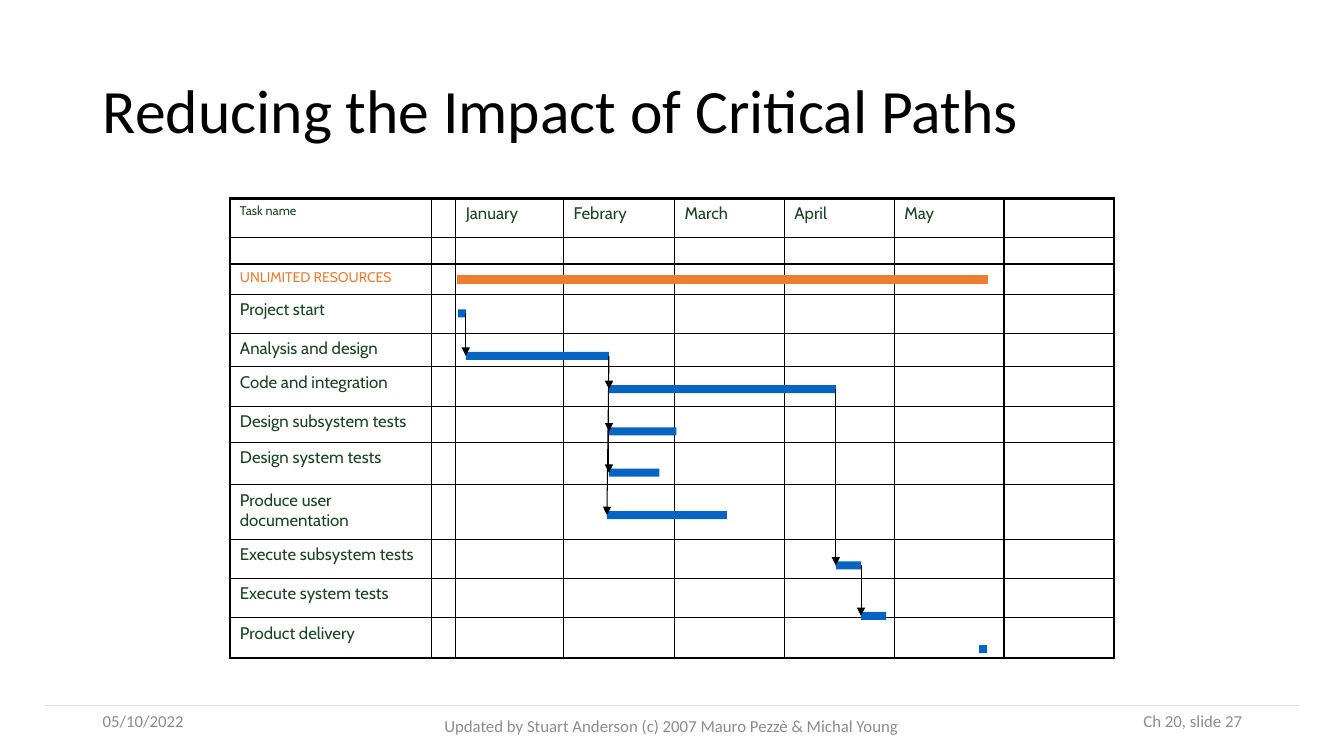
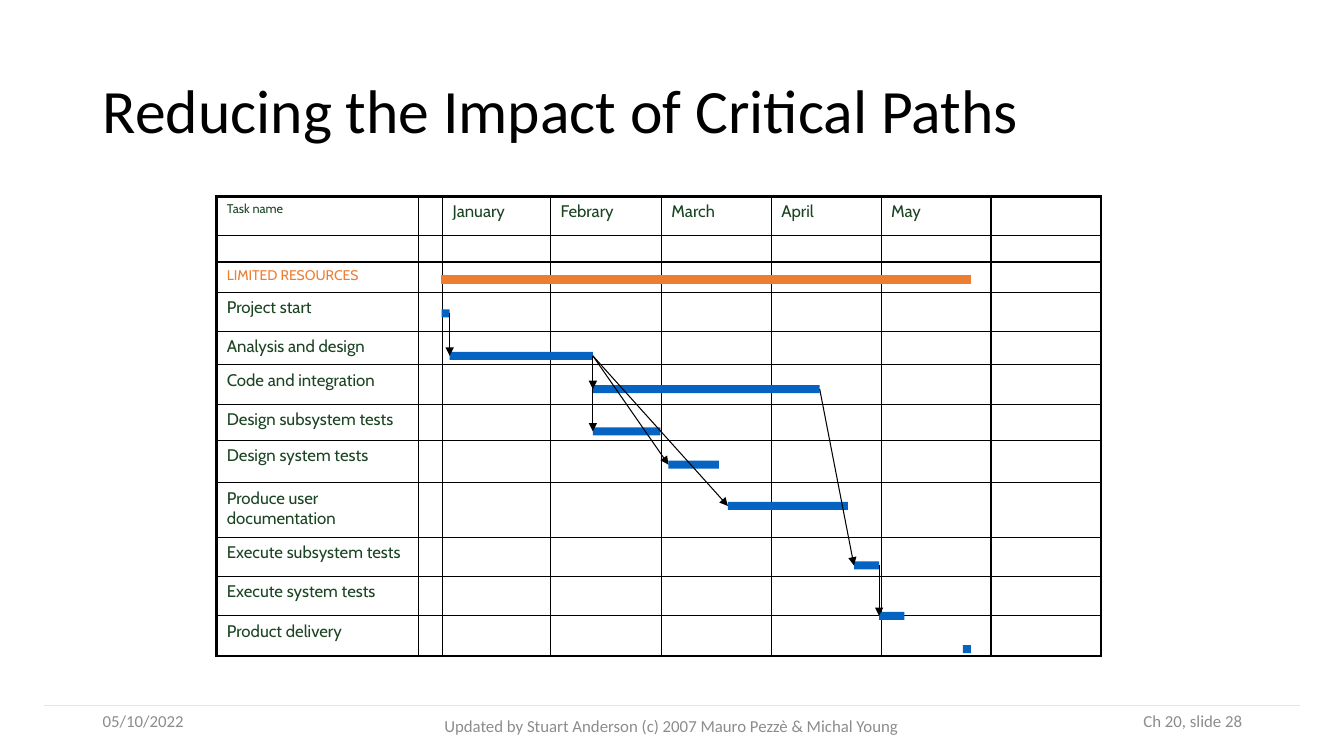
"""Build two Gantt slides that compare unlimited and limited resources."""
from lxml.etree import SubElement
from pptx import Presentation
from pptx.dml.color import RGBColor
from pptx.enum.shapes import MSO_CONNECTOR, MSO_SHAPE
from pptx.enum.text import MSO_ANCHOR, MSO_AUTO_SIZE, PP_ALIGN
from pptx.oxml.ns import qn
from pptx.oxml.xmlchemy import OxmlElement
from pptx.util import Pt

PX = 9144
COLORS = {
    "black": "000000",
    "task": "1A4422",
    "bar": "0563C1",
    "total": "ED7D31",
    "footer": "8C8C8C",
    "rule": "E7E6E6",
}
TITLE = "Reducing the Impact of Critical Paths"
TITLE_BOX = (92, 40, 1150, 145)
FOOTERS = [
    ("05/10/2022", (92, 695, 197, 40), PP_ALIGN.LEFT),
    ("Updated by Stuart Anderson (c) 2007 Mauro Pezzè & Michal Young",
     (416, 700, 500, 40), PP_ALIGN.CENTER),
    ("Ch 20, slide {number}", (1029, 695, 213, 40), PP_ALIGN.RIGHT),
]
FOOTER_RULE = ((44, 700), (1289, 700))

MONTHS = ["January", "Febrary", "March", "April", "May"]
COLUMNS = [200, 24, 107, 110, 109, 109, 109, 109]
ROWS = [39, 26, 30, 39, 33, 39, 36, 42, 54, 39, 39, 40]
TASKS = [
    "Project start",
    "Analysis and design",
    "Code and integration",
    "Design subsystem tests",
    "Design system tests",
    "Produce user documentation",
    "Execute subsystem tests",
    "Execute system tests",
    "Product delivery",
]
DEPENDENCIES = [
    (0, 1), (1, 2), (1, 3), (1, 4), (1, 5), (2, 6), (6, 7),
]
BAR_HEIGHT = 8
TOTAL_BAR = (0, 525, 277)
PLANS = [
    {
        "number": 27,
        "heading": "UNLIMITED RESOURCES",
        "table": (228, 197),
        "origin": 454,
        "bars": [(0, 8, 311), (8, 142, 353), (150, 225, 386), (150, 67, 428),
                 (150, 50, 469), (148, 119, 511), (375, 25, 561),
                 (400, 25, 611), (517, 8, 644)],
    },
    {
        "number": 28,
        "heading": "LIMITED RESOURCES",
        "table": (215, 195),
        "origin": 438,
        "bars": [(0, 8, 311), (8, 142, 353), (150, 225, 386), (150, 67, 428),
                 (225, 50, 461), (284, 119, 502), (409, 25, 561),
                 (434, 25, 611), (517, 8, 644)],
    },
]


def emu(lengths):
    return [length * PX for length in lengths]


def color(name):
    return RGBColor.from_string(COLORS[name])


def format_text(paragraph, font_name, size, color_name):
    paragraph.font.name = font_name
    paragraph.font.size = Pt(size)
    paragraph.font.color.rgb = color(color_name)


def add_title(slide):
    title = slide.shapes.title
    title.left, title.top, title.width, title.height = emu(TITLE_BOX)
    frame = title.text_frame
    frame.text = TITLE
    frame.auto_size = MSO_AUTO_SIZE.NONE
    frame.vertical_anchor = MSO_ANCHOR.MIDDLE
    paragraph = frame.paragraphs[0]
    paragraph.alignment = PP_ALIGN.LEFT
    paragraph.line_spacing = 0.9
    format_text(paragraph, "Calibri", 44, "black")


def add_line(slide, start, end, color_name, arrow=False):
    connector = slide.shapes.add_connector(
        MSO_CONNECTOR.STRAIGHT, *emu(start), *emu(end))
    connector.line.color.rgb = color(color_name)
    connector.line.width = Pt(0.75)
    properties = connector._element.spPr
    if arrow:
        SubElement(properties.find(qn("a:ln")), qn("a:tailEnd"), type="triangle")
    SubElement(properties, qn("a:effectLst"))


def add_footers(slide, number):
    add_line(slide, *FOOTER_RULE, "rule")
    for text, box, alignment in FOOTERS:
        frame = slide.shapes.add_textbox(*emu(box)).text_frame
        frame.word_wrap = True
        frame.vertical_anchor = MSO_ANCHOR.MIDDLE
        frame.text = text.format(number=number)
        frame.paragraphs[0].alignment = alignment
        format_text(frame.paragraphs[0], "Calibri", 12, "footer")


def set_borders(cell, outer_sides):
    properties = cell._tc.get_or_add_tcPr()
    for index, side in enumerate("LRTB"):
        width = Pt(2.25 if side in outer_sides else 1)
        border = OxmlElement(f"a:ln{side}")
        border.set("w", str(width))
        fill = SubElement(border, qn("a:solidFill"))
        SubElement(fill, qn("a:srgbClr"), val=COLORS["black"])
        properties.insert(index, border)


def fill_cell(cell, text, size, color_name):
    cell.text = text
    paragraph = cell.text_frame.paragraphs[0]
    format_text(paragraph, "Cabin", size, color_name)
    if text:
        paragraph.space_before = Pt(size * 0.2)
    else:
        SubElement(paragraph._p, qn("a:endParaRPr"), sz=str(size * 100))
    cell.fill.background()


def add_schedule(slide, plan):
    size = (sum(COLUMNS), sum(ROWS))
    table = slide.shapes.add_table(
        len(ROWS), len(COLUMNS), *emu(plan["table"] + size)).table
    table.first_row = table.horz_banding = False
    for column, width in zip(table.columns, emu(COLUMNS)):
        column.width = width
    for row, height in zip(table.rows, emu(ROWS)):
        row.height = height

    texts = {(0, 0): ("Task name", 9, "task"),
             (2, 0): (plan["heading"], 10, "total")}
    texts.update({(0, c): (month, 12, "task") for c, month in enumerate(MONTHS, 2)})
    texts.update({(r, 0): (task, 12, "task") for r, task in enumerate(TASKS, 3)})
    last_row, last_column = len(ROWS) - 1, len(COLUMNS) - 1
    for r in range(len(ROWS)):
        for c in range(len(COLUMNS)):
            cell = table.cell(r, c)
            fill_cell(cell, *texts.get((r, c), ("", 8, "task")))
            edges = {"L": c == 0, "R": c == last_column,
                     "T": r == 0, "B": r == last_row}
            set_borders(cell, [side for side, outer in edges.items() if outer])


def add_bar(slide, origin, bar, color_name):
    start, length, middle = bar
    box = (origin + start, middle - BAR_HEIGHT // 2, length, BAR_HEIGHT)
    shape = slide.shapes.add_shape(MSO_SHAPE.RECTANGLE, *emu(box))
    shape.shadow.inherit = False
    shape.fill.solid()
    shape.fill.fore_color.rgb = color(color_name)
    shape.line.fill.background()
    return shape


def add_bars(slide, origin, bars):
    for bar in bars:
        add_bar(slide, origin, bar, "bar")
    total = add_bar(slide, origin, TOTAL_BAR, "total")
    total.line.color.rgb = color("total")
    total.line.width = Pt(0.75)
    for before, after in DEPENDENCIES:
        start, length, middle = bars[before]
        next_start, _, next_middle = bars[after]
        add_line(slide, (origin + start + length, middle),
                 (origin + next_start, next_middle), "black", arrow=True)


def main():
    deck = Presentation()
    deck.slide_width, deck.slide_height = emu((1333, 750))
    for plan in PLANS:
        slide = deck.slides.add_slide(deck.slide_layouts[5])
        add_title(slide)
        add_footers(slide, plan["number"])
        add_schedule(slide, plan)
        add_bars(slide, plan["origin"], plan["bars"])
    deck.save("out.pptx")


if __name__ == "__main__":
    main()
